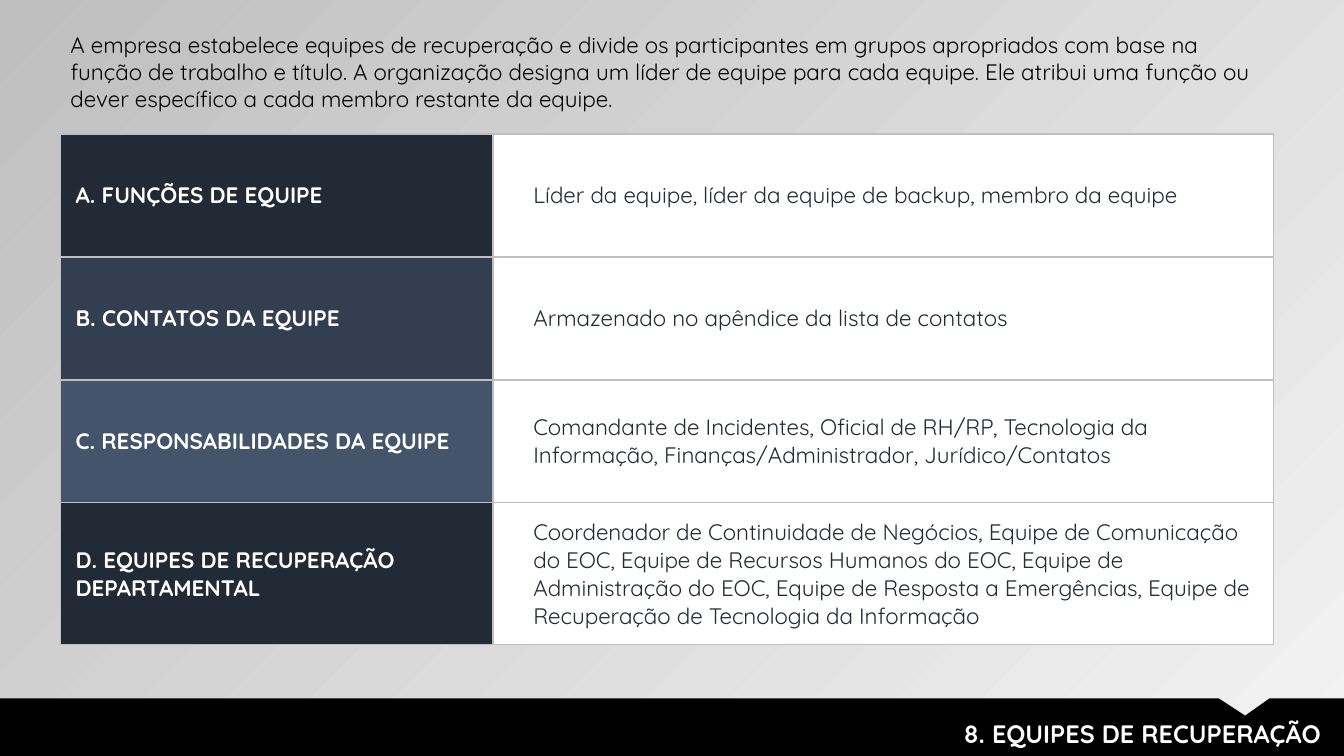
"""Builds the recovery teams slide with its table and footer band."""
from lxml import etree
from pptx import Presentation
from pptx.dml.color import RGBColor
from pptx.enum.text import MSO_ANCHOR, MSO_AUTO_SIZE, PP_ALIGN
from pptx.oxml.ns import qn
from pptx.util import Inches, Pt

MIDDLE = MSO_ANCHOR.MIDDLE
NO_FIT = MSO_AUTO_SIZE.NONE
RIGHT = PP_ALIGN.RIGHT
FONT = "Quicksand"
COLORS = {
    "black": "000000", "white": "FFFFFF", "navy": "222A35", "slate": "333F50",
    "steel": "44546A", "border": "BFBFBF", "light": "F2F2F2",
}
INTRO = (
    "A empresa estabelece equipes de recuperação e divide os participantes em grupos "
    "apropriados com base na função de trabalho e título. A organização designa um líder "
    "de equipe para cada equipe. Ele atribui uma função ou dever específico a cada membro "
    "restante da equipe."
)
ROWS = [
    ("A. FUNÇÕES DE EQUIPE", "navy",
     "Líder da equipe, líder da equipe de backup, membro da equipe"),
    ("B. CONTATOS DA EQUIPE", "slate",
     "Armazenado no apêndice da lista de contatos"),
    ("C. RESPONSABILIDADES DA EQUIPE", "steel",
     "Comandante de Incidentes, Oficial de RH/RP, Tecnologia da Informação, "
     "Finanças/Administrador, Jurídico/Contatos"),
    ("D. EQUIPES DE RECUPERAÇÃO DEPARTAMENTAL", "navy",
     "Coordenador de Continuidade de Negócios, Equipe de Comunicação do EOC, Equipe de "
     "Recursos Humanos do EOC, Equipe de Administração do EOC, Equipe de Resposta a "
     "Emergências, Equipe de Recuperação de Tecnologia da Informação"),
]


def add_text(tf, text, size, color, bold=False):
    tf.word_wrap = True
    p = tf.paragraphs[0]
    r = p.add_run()
    r.text = text
    r.font.name = FONT
    r.font.size = Pt(size)
    r.font.bold = bold
    r.font.color.rgb = RGBColor.from_string(COLORS[color])
    return p


def format_cell(cell, fill, left_margin):
    cell.vertical_anchor = MIDDLE
    cell.margin_left = Inches(left_margin)
    cell.margin_top = cell.margin_right = cell.margin_bottom = Inches(0.15)
    tc_pr = cell._tc.get_or_add_tcPr()
    for side in ("a:lnL", "a:lnR", "a:lnT", "a:lnB"):
        ln = etree.SubElement(tc_pr, qn(side), w=str(Pt(1)))
        solid = etree.SubElement(ln, qn("a:solidFill"))
        etree.SubElement(solid, qn("a:srgbClr"), val=COLORS["border"])
    cell.fill.solid()
    cell.fill.fore_color.rgb = RGBColor.from_string(COLORS[fill])


prs = Presentation()
prs.slide_width, prs.slide_height = Inches(13.33), Inches(7.5)
s = prs.slides.add_slide(prs.slide_layouts[5])

bg = s.background.fill
bg.gradient()
bg.gradient_angle = 135
for stop, position, color in zip(bg.gradient_stops, (0, 1), ("light", "border")):
    stop.position = position
    stop.color.rgb = RGBColor.from_string(COLORS[color])

table = s.shapes.add_table(
    len(ROWS), 2, Inches(0.6), Inches(1.33), Inches(12.03), Inches(4.88)).table
for column, width in zip(table.columns, (4.29, 7.74)):
    column.width = Inches(width)
for i, (label, color, detail) in enumerate(ROWS):
    table.rows[i].height = Inches(1.22)
    head, body = table.cell(i, 0), table.cell(i, 1)
    format_cell(head, color, 0.15)
    add_text(head.text_frame, label, 16, "white", True)
    format_cell(body, "white", 0.4)
    add_text(body.text_frame, detail, 16, "navy")

outline = [(12.09, 6.93), (12.35, 7.1), (12.59, 6.93), (13.33, 6.93), (13.33, 7.5), (0, 7.5)]
builder = s.shapes.build_freeform(Inches(0), Inches(6.93))
builder.add_line_segments([(Inches(x), Inches(y)) for x, y in outline], close=True)
band = builder.convert_to_shape()
band.shadow.inherit = False
band.fill.solid()
band.fill.fore_color.rgb = RGBColor.from_string(COLORS["black"])
band.line.fill.background()

title = s.shapes.title
band.element.addnext(title.element)
title.left, title.top = Inches(4.14), Inches(7.08)
title.width, title.height = Inches(9.06), Inches(0.4)
tf = title.text_frame
tf.auto_size = NO_FIT
tf.vertical_anchor = MIDDLE
p = add_text(tf, "8. EQUIPES DE RECUPERAÇÃO", 18, "white", True)
p.alignment = RIGHT

intro = s.shapes.add_textbox(Inches(0.6), Inches(0.26), Inches(12.03), Inches(0.91))
add_text(intro.text_frame, INTRO, 16, "black")

prs.save("out.pptx")
